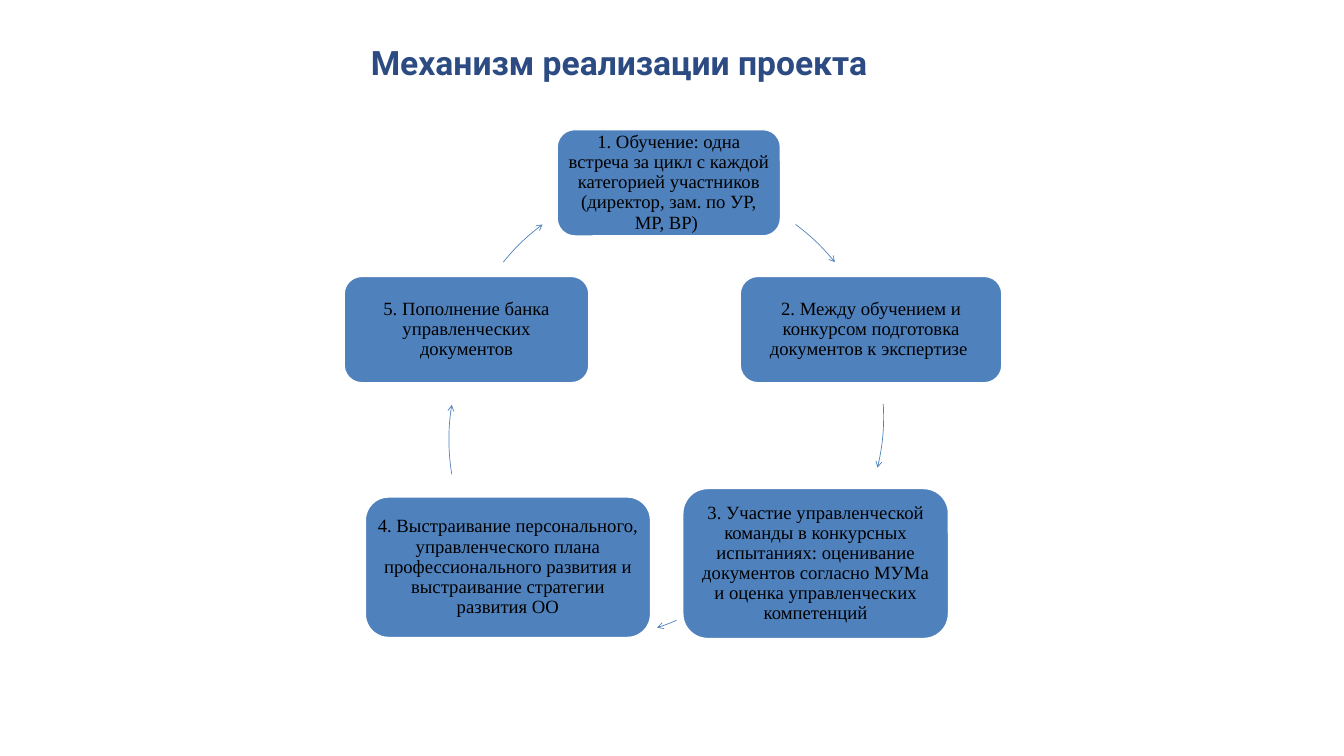
from lxml import etree
from pptx import Presentation
from pptx.dml.color import RGBColor
from pptx.enum.shapes import MSO_SHAPE
from pptx.enum.text import MSO_ANCHOR, PP_ALIGN
from pptx.oxml.ns import qn
from pptx.util import Cm, Pt

ROUND = MSO_SHAPE.ROUNDED_RECTANGLE
ARC = MSO_SHAPE.ARC
MIDDLE = MSO_ANCHOR.MIDDLE
CENTER = PP_ALIGN.CENTER

NAVY = RGBColor(0x2B, 0x4B, 0x82)
BLUE = RGBColor(0x4F, 0x81, 0xBD)
WHITE = RGBColor(0xFF, 0xFF, 0xFF)
BLACK = RGBColor(0x00, 0x00, 0x00)

RING = Cm(16.08)
TURN = 0.6  # adjustment units in one degree

# left, top, width, height in cm, then text
STEPS = [
    (21.05, 4.89, 8.46, 4.04,
     "1. Обучение: одна встреча за цикл с каждой категорией участников "
     "(директор, зам. по УР, МР, ВР) "),
    (27.97, 10.44, 9.91, 4.04,
     "2. Между обучением и конкурсом подготовка документов к экспертизе "),
    (25.8, 18.46, 10.06, 5.69,
     "3. Участие управленческой команды в конкурсных испытаниях: оценивание "
     "документов согласно МУМа и оценка управленческих компетенций"),
    (13.8, 18.78, 10.8, 5.33,
     "4. Выстраивание персонального, управленческого плана профессионального "
     "развития и выстраивание стратегии развития ОО"),
    (13, 10.44, 9.27, 4.04,
     "5. Пополнение банка управленческих документов"),
]

# left and top of the ring in cm, then first and last angle in degrees
ARROWS = [
    (17.25, 6.91, 306.5, 321.2),
    (17.32, 7.72, 356.5, 13.8),
    (14.3, 8.05, 66.3, 71.9),
    (16.97, 8.58, 170.6, 189.4),
    (17.25, 6.91, 218.8, 233.5),
]


def style(frame, font, size, color, bold=False):
    frame.word_wrap = True
    frame.vertical_anchor = MIDDLE
    para = frame.paragraphs[0]
    para.alignment = CENTER
    for run in para.runs:
        run.font.name = font
        run.font.size = Pt(size)
        run.font.bold = bold
        run.font.color.rgb = color


deck = Presentation()
deck.slide_width = Cm(50.8)
deck.slide_height = Cm(28.58)
slide = deck.slides.add_slide(deck.slide_layouts[5])
shapes = slide.shapes

title = shapes.title
title.left, title.top = Cm(1.27), Cm(0.76)
title.width, title.height = Cm(44.58), Cm(3.18)
title.text_frame.text = "Механизм реализации проекта "
style(title.text_frame, "Roboto", 36, NAVY, bold=True)

for left, top, width, height, text in STEPS:
    box = shapes.add_shape(ROUND, Cm(left), Cm(top), Cm(width), Cm(height))
    box.shadow.inherit = False
    box.fill.solid()
    box.fill.fore_color.rgb = BLUE
    box.line.color.rgb = WHITE
    box.line.width = Pt(2)
    frame = box.text_frame
    frame.margin_left = frame.margin_right = Cm(0.2)
    frame.margin_top = frame.margin_bottom = Cm(0.2)
    frame.text = text
    frame.paragraphs[0].line_spacing = 0.9
    style(frame, "Times New Roman", 20, BLACK)

for left, top, first, last in ARROWS:
    arrow = shapes.add_shape(ARC, Cm(left), Cm(top), RING, RING)
    arrow.adjustments[0] = first * TURN
    arrow.adjustments[1] = last * TURN
    arrow.shadow.inherit = False
    arrow.fill.background()
    arrow.line.color.rgb = BLUE
    arrow.line.width = Pt(0.75)
    line = arrow.element.spPr.find(qn("a:ln"))
    etree.SubElement(line, qn("a:tailEnd"), type="arrow")

deck.save("out.pptx")
